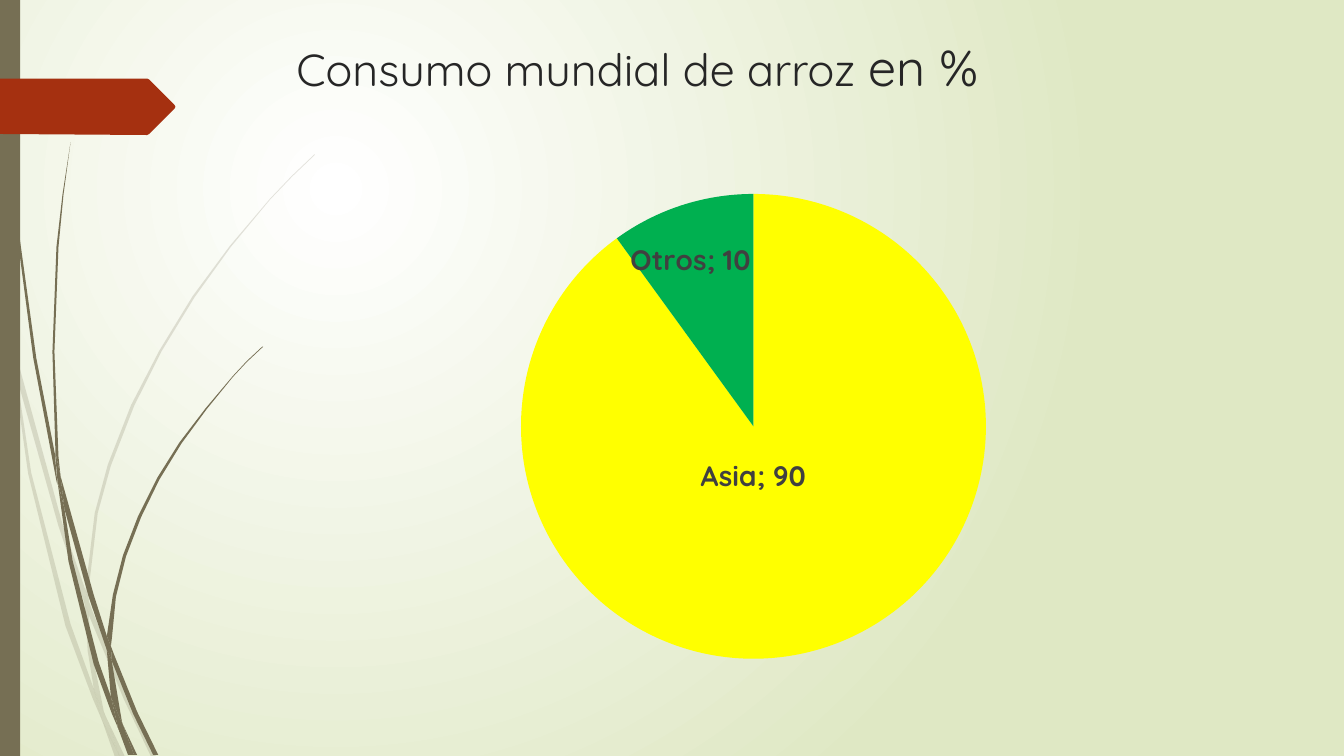
"""Build a slide with a pie chart of world rice consumption beside blades of grass."""
from lxml.etree import SubElement
from pptx import Presentation
from pptx.chart.data import CategoryChartData
from pptx.dml.color import RGBColor
from pptx.enum.chart import XL_CHART_TYPE, XL_LABEL_POSITION
from pptx.enum.shapes import MSO_SHAPE
from pptx.enum.text import MSO_ANCHOR, PP_ALIGN
from pptx.oxml import parse_xml
from pptx.oxml.ns import nsdecls, qn
from pptx.util import Inches, Pt

WHITE = RGBColor(0xFF, 0xFF, 0xFF)
PALE_GREEN = RGBColor(0xDF, 0xE8, 0xC4)
OLIVE = RGBColor(0x76, 0x6F, 0x54)
RUST = RGBColor(0xA5, 0x30, 0x10)
YELLOW = RGBColor(0xFF, 0xFF, 0x00)
GREEN = RGBColor(0x00, 0xB0, 0x50)
INK = RGBColor(0x26, 0x26, 0x26)
LABEL_GREY = RGBColor(0x40, 0x40, 0x40)
FONT = "Quicksand"

PENNANT = [(0, 0.78), (1.46, 0.78), (1.48, 0.79), (1.73, 1.04), (1.74, 1.06),
           (1.73, 1.08), (1.48, 1.33), (1.46, 1.34), (0, 1.33)]
FAINT_GRASS = [
    [(0.11, 3.5), (0.09, 3.22), (0, 2.82), (0, 2.99), (0.1, 3.44)],
    [(0.58, 5.22), (0.84, 5.99), (0.85, 5.86), (0.62, 5.2), (0.14, 3.45), (0.17, 3.76)],
    [(0.92, 6.07), (0.88, 5.96), (0.88, 6.1), (1.23, 6.94), (1.5, 7.51), (1.55, 7.51),
     (1.27, 6.92)],
    [(1.19, 7.51), (1.24, 7.51), (1.05, 7.11)],
    [(0.93, 6.83), (0.7, 6.19), (0.31, 4.69), (0.17, 3.76), (0.11, 3.5), (0.28, 4.7),
     (0.65, 6.21), (0.92, 6.93), (1.01, 7.14), (0.99, 7.07)],
    [(0.84, 5.99), (0.87, 6.46), (0.93, 6.83), (0.96, 6.92), (1.05, 7.11), (1.03, 7.06),
     (0.91, 6.46), (0.88, 6.1), (0.88, 6.08)],
    [(0.88, 5.84), (0.97, 5.09), (1.1, 4.62), (1.33, 4.03), (1.6, 3.49), (1.93, 2.95),
     (2.29, 2.45), (2.68, 1.98), (2.9, 1.75), (3.12, 1.54), (3.12, 1.53), (2.89, 1.75),
     (2.68, 1.97), (2.28, 2.44), (1.91, 2.94), (1.58, 3.48), (1.3, 4.02), (1.07, 4.61),
     (0.94, 5.09), (0.85, 5.84), (0.85, 5.86), (0.88, 5.96)],
    [(1.01, 7.14), (1.14, 7.51), (1.19, 7.51)],
    [(0.88, 6.08), (0.88, 6.1), (0.88, 5.96), (0.85, 5.86), (0.84, 5.99)],
    [(0.96, 6.92), (0.93, 6.83), (0.99, 7.07), (1.01, 7.14), (1.19, 7.51), (1.05, 7.11)],
]
DARK_GRASS = [
    [(0.07, 1.1), (0.17, 2.33), (0.33, 3.55), (0.56, 4.77), (0.57, 4.81), (0.55, 4.57),
     (0.55, 4.53), (0.36, 3.55), (0.19, 2.32), (0.08, 1.09), (0.05, 0.48), (0.04, 0),
     (0.03, 0), (0.04, 0.48)],
    [(0.88, 5.92), (1.06, 6.45), (1.06, 6.33), (1.06, 6.31), (0.93, 5.9), (0.6, 4.72),
     (0.64, 5.05)],
    [(1.13, 6.49), (1.1, 6.41), (1.11, 6.56), (1.32, 7.08), (1.52, 7.49), (1.57, 7.49),
     (1.36, 7.06)],
    [(1.1, 6.91), (0.98, 6.57), (0.72, 5.56), (0.64, 5.05), (0.57, 4.77), (0.68, 5.57),
     (0.93, 6.59), (1.11, 7.08), (1.17, 7.22), (1.16, 7.17)],
    [(0.6, 4.72), (0.58, 4.53), (0.54, 3.49), (0.58, 2.45), (0.63, 1.93), (0.7, 1.41),
     (0.62, 1.93), (0.56, 2.45), (0.52, 3.49), (0.55, 4.49)],
    [(1.33, 7.49), (1.36, 7.49), (1.22, 7.19)],
    [(0.57, 4.77), (0.64, 5.05), (0.6, 4.72), (0.55, 4.49), (0.55, 4.53)],
    [(1.11, 6.33), (1.15, 5.92), (1.25, 5.52), (1.4, 5.13), (1.58, 4.76), (1.8, 4.4),
     (2.05, 4.06), (2.31, 3.74), (2.45, 3.59), (2.61, 3.44), (2.6, 3.44), (2.45, 3.58),
     (2.31, 3.73), (2.04, 4.05), (1.78, 4.39), (1.56, 4.74), (1.37, 5.12), (1.22, 5.51),
     (1.12, 5.9), (1.06, 6.31), (1.1, 6.41)],
    [(1.17, 7.22), (1.27, 7.49), (1.31, 7.49)],
    [(1.06, 6.45), (1.1, 6.91), (1.16, 7.06), (1.22, 7.19), (1.21, 7.16), (1.11, 6.56),
     (1.09, 6.51)],
    [(1.06, 6.45), (1.09, 6.51), (1.11, 6.56), (1.1, 6.41), (1.06, 6.31), (1.06, 6.33)],
    [(1.16, 7.06), (1.1, 6.91), (1.16, 7.17), (1.17, 7.22), (1.3, 7.49), (1.33, 7.49),
     (1.22, 7.19)],
]


def paint(shape, color):
    """Give a shape a plain fill with no line or shadow."""
    shape.shadow.inherit = False
    shape.fill.solid()
    shape.fill.fore_color.rgb = color
    shape.line.fill.background()


def add_outline(page, points, color):
    """Add a closed, filled shape through points given in inches."""
    corners = [(Inches(x), Inches(y)) for x, y in points]
    builder = page.shapes.build_freeform(*corners[0])
    builder.add_line_segments(corners[1:], close=True)
    outline = builder.convert_to_shape()
    paint(outline, color)
    return outline


deck = Presentation()
deck.slide_width, deck.slide_height = Inches(13.33), Inches(7.5)
page = deck.slides.add_slide(deck.slide_layouts[5])

backdrop = page.background.fill
backdrop.gradient()
for stop, color, position in zip(backdrop.gradient_stops, (WHITE, PALE_GREEN), (0, 1)):
    stop.color.rgb = color
    stop.position = position
direction = next(page.element.iter(qn("a:lin")))
direction.getparent().replace(direction, parse_xml(
    f'<a:path {nsdecls("a")} path="circle">'
    '<a:fillToRect l="50000" t="50000" r="100000" b="100000"/></a:path>'))

for grass, opacity in ((FAINT_GRASS, 20), (DARK_GRASS, 100)):
    for points in grass:
        blade = add_outline(page, points, OLIVE)
        if opacity < 100:
            tint = next(blade.element.iter(qn("a:srgbClr")))
            SubElement(tint, qn("a:alpha"), val=str(opacity * 1000))

side_bar = page.shapes.add_shape(MSO_SHAPE.RECTANGLE, 0, 0, Inches(0.2), Inches(7.5))
paint(side_bar, OLIVE)
add_outline(page, PENNANT, RUST)

title = page.shapes.title
title.left, title.top = Inches(2.84), Inches(0.31)
title.width, title.height = Inches(9.75), Inches(0.87)
title.text_frame.vertical_anchor = MSO_ANCHOR.TOP
heading = title.text_frame.paragraphs[0]
heading.alignment = PP_ALIGN.LEFT
for words, size in (("Consumo mundial de arroz ", 32), ("en %", 36)):
    span = heading.add_run()
    span.text = words
    span.font.name = FONT
    span.font.size = Pt(size)
    span.font.color.rgb = INK

consumption = CategoryChartData()
consumption.categories = ["Asia", "Otros"]
consumption.add_series("Series 1", (90, 10))
chart = page.shapes.add_chart(XL_CHART_TYPE.PIE, Inches(2.84), Inches(1.65),
                              Inches(8.91), Inches(5.49), consumption).chart
chart.has_title = False
chart.has_legend = False
chart.font.name = FONT
chart.font.size = Pt(10)
pie = chart.plots[0]
pie.vary_by_categories = False
series = pie.series[0]
for index, color in enumerate((YELLOW, GREEN)):
    point = series.points[index]
    point.format.fill.solid()
    point.format.fill.fore_color.rgb = color
    point.format.line.fill.background()
    label = point.data_label
    label.position = XL_LABEL_POSITION.CENTER
    label.font.name = FONT
    label.font.size = Pt(20)
    label.font.bold = True
    label.font.color.rgb = LABEL_GREY

label_shifts = [(-0.04, -0.11), (-0.03, -0.1)]
for label_xml, (x, y) in zip(series._element.iter(qn("c:dLbl")), label_shifts):
    label_xml.find(qn("c:showCatName")).set("val", "1")
    SubElement(label_xml, qn("c:separator")).text = "; "
    label_xml.insert(1, parse_xml(
        f'<c:layout {nsdecls("c")}><c:manualLayout>'
        f'<c:x val="{x}"/><c:y val="{y}"/></c:manualLayout></c:layout>'))

plot_area = pie._element.getparent()
for layout in plot_area.findall(qn("c:layout")):
    plot_area.remove(layout)
plot_area.insert(0, parse_xml(
    f'<c:layout {nsdecls("c")}><c:manualLayout><c:layoutTarget val="inner"/>'
    '<c:xMode val="edge"/><c:yMode val="edge"/><c:x val="0.05"/><c:y val="0.05"/>'
    '<c:w val="0.94"/><c:h val="0.84"/></c:manualLayout></c:layout>'))

deck.save("out.pptx")
